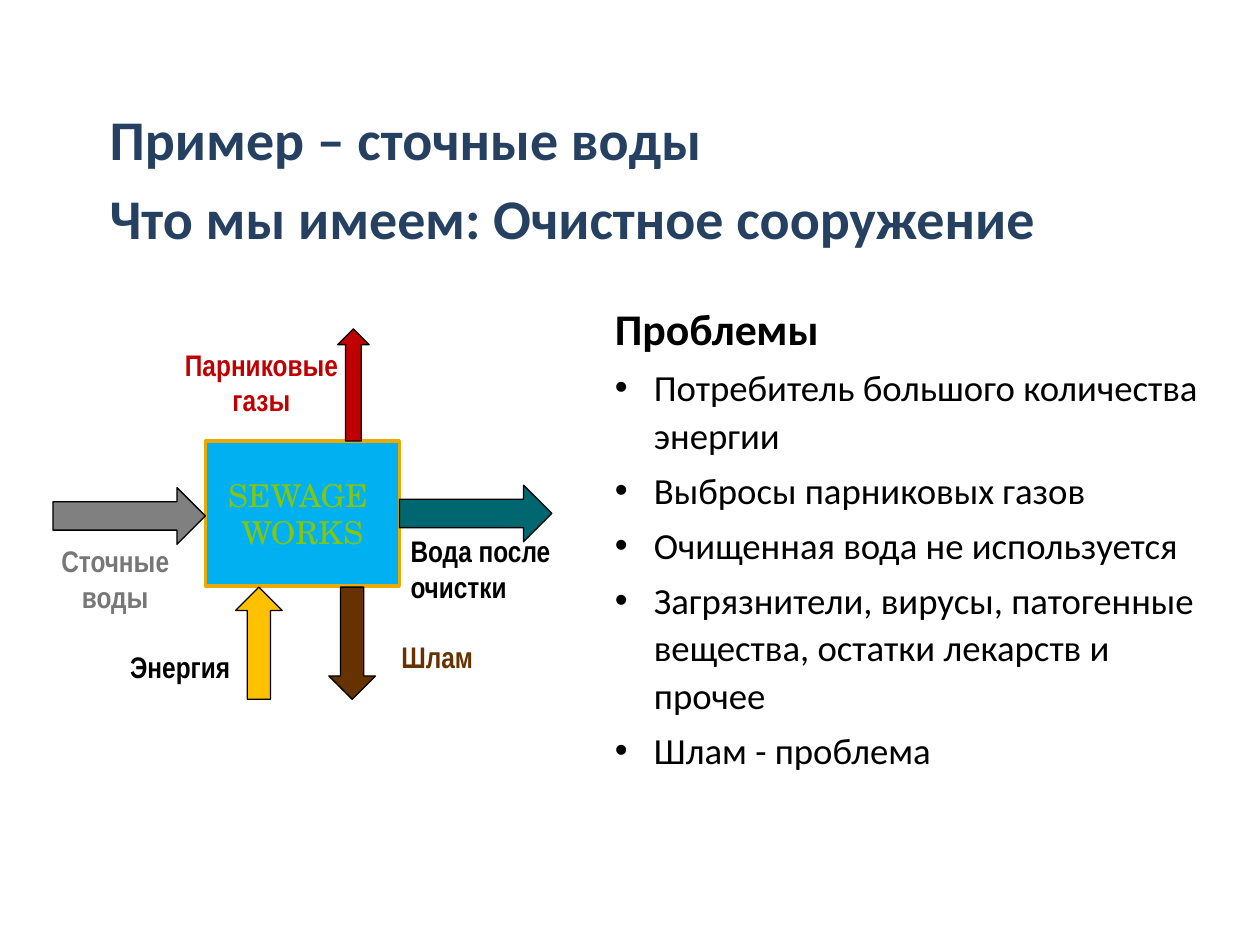
from dataclasses import dataclass

from lxml import etree
from pptx import Presentation
from pptx import util as u
from pptx.dml.color import RGBColor
from pptx.enum import shapes, text
from pptx.oxml import ns


@dataclass(frozen=True)
class Theme:
    title_color: str = "254061"
    black: str = "000000"
    plant_fill: str = "00B0F0"
    plant_line: str = "ECAA00"
    plant_text: str = "84C60E"
    sewage: str = "808080"
    sewage_text: str = "777777"
    water: str = "006770"
    gas: str = "C00000"
    energy: str = "FFC000"
    sludge: str = "663300"
    font: str = "Calibri"
    label_font: str = "Arial Narrow"
    plant_font: str = "TeX Gyre Schola"
    title_size: int = 32
    heading_size: int = 25
    bullet_size: int = 21
    plant_size: int = 18
    label_size: int = 17


theme = Theme()


def set_font(paragraph, name, size, color, bold=False):
    paragraph.font.name = name
    paragraph.font.size = u.Pt(size)
    paragraph.font.color.rgb = RGBColor.from_string(color)
    paragraph.font.bold = bold


def add_filled_shape(kind, box, fill, line, line_width):
    shape = slide.shapes.add_shape(kind, *map(u.Inches, box))
    shape.shadow.inherit = False
    shape.fill.solid()
    shape.fill.fore_color.rgb = RGBColor.from_string(fill)
    shape.line.color.rgb = RGBColor.from_string(line)
    shape.line.width = u.Pt(line_width)
    return shape


presentation = Presentation()
presentation.slide_width = u.Inches(10)
presentation.slide_height = u.Inches(7.5)
slide = presentation.slides.add_slide(presentation.slide_layouts[5])

# Title
title = slide.shapes.title
title.left, title.top = u.Inches(0.77), u.Inches(0.68)
title.width, title.height = u.Inches(8.48), u.Inches(1.26)
title.text_frame.text = "Пример – сточные воды\vЧто мы имеем: Очистное сооружение"
title.text_frame.vertical_anchor = text.MSO_ANCHOR.TOP
title.text_frame.auto_size = text.MSO_AUTO_SIZE.NONE
paragraph = title.text_frame.paragraphs[0]
paragraph.alignment = text.PP_ALIGN.LEFT
paragraph.line_spacing = 1.18
set_font(paragraph, theme.font, theme.title_size, theme.title_color, bold=True)

# Problems
problems = slide.shapes.add_textbox(u.Inches(4.88), u.Inches(2.36), u.Inches(4.75), u.Inches(3.99))
frame = problems.text_frame
frame.word_wrap = True
frame.margin_left = frame.margin_top = frame.margin_right = frame.margin_bottom = 0
frame.text = "Проблемы"
frame.paragraphs[0].line_spacing = 1.08
set_font(frame.paragraphs[0], theme.font, theme.heading_size, theme.black, bold=True)
for problem in (
    "Потребитель большого количества энергии",
    "Выбросы парниковых газов",
    "Очищенная вода не используется",
    "Загрязнители, вирусы, патогенные вещества, остатки лекарств и прочее",
    "Шлам - проблема",
):
    paragraph = frame.add_paragraph()
    paragraph.text = problem
    paragraph.line_spacing = 1.08
    paragraph.space_before = u.Pt(0.2 * theme.bullet_size)
    properties = paragraph._p.get_or_add_pPr()
    properties.set("marL", str(u.Inches(0.31)))
    properties.set("indent", str(-u.Inches(0.31)))
    etree.SubElement(properties, ns.qn("a:buFont"), typeface="Arial")
    etree.SubElement(properties, ns.qn("a:buChar"), char="•")
    set_font(paragraph, theme.font, theme.bullet_size, theme.black)

# Sewage works
plant = add_filled_shape(shapes.MSO_SHAPE.RECTANGLE, (1.63, 3.5, 1.54, 1.15),
                         theme.plant_fill, theme.plant_line, 2)
plant.text_frame.text = "SEWAGE \nWORKS"
plant.text_frame.word_wrap = False
plant.text_frame.vertical_anchor = text.MSO_ANCHOR.MIDDLE
for paragraph in plant.text_frame.paragraphs:
    paragraph.alignment = text.PP_ALIGN.CENTER
    set_font(paragraph, theme.plant_font, theme.plant_size, theme.plant_text)

# Flows in and out
for box, rotation, fill in (
    ((0.42, 3.87, 1.21, 0.45), 0, theme.sewage),
    ((3.17, 3.85, 1.21, 0.45), 0, theme.water),
    ((2.36, 2.93, 0.89, 0.25), 270, theme.gas),
    ((1.61, 4.92, 0.89, 0.37), 270, theme.energy),
    ((2.35, 4.92, 0.89, 0.37), 90, theme.sludge),
):
    arrow = add_filled_shape(shapes.MSO_SHAPE.RIGHT_ARROW, box, fill, theme.black, 0.75)
    arrow.rotation = rotation

# Flow labels
center, left = text.PP_ALIGN.CENTER, text.PP_ALIGN.LEFT
for label, box, color, alignment in (
    ("Сточные воды", (0.15, 4.26, 1.53, 0.68), theme.sewage_text, center),
    ("Энергия", (0.67, 5.1, 1.52, 0.39), theme.black, center),
    ("Шлам", (2.71, 5.02, 1.52, 0.39), theme.sludge, center),
    ("Вода после очистки", (3.16, 4.18, 1.68, 0.68), theme.black, left),
    ("Парниковые газы", (1.22, 2.7, 1.71, 0.68), theme.gas, center),
):
    label_box = slide.shapes.add_textbox(*map(u.Inches, box))
    label_box.text_frame.word_wrap = True
    label_box.text_frame.auto_size = text.MSO_AUTO_SIZE.SHAPE_TO_FIT_TEXT
    label_box.text_frame.text = label
    paragraph = label_box.text_frame.paragraphs[0]
    paragraph.alignment = alignment
    set_font(paragraph, theme.label_font, theme.label_size, color, bold=True)

presentation.save("out.pptx")
